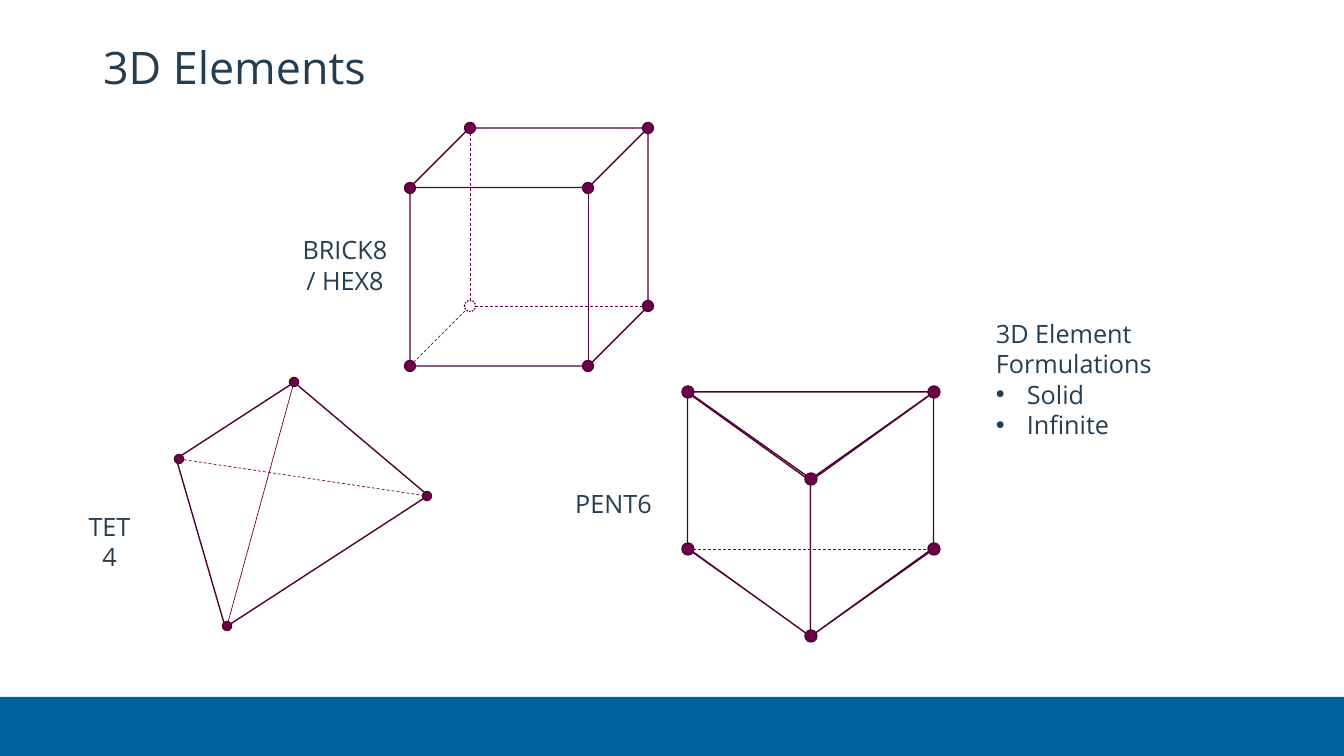
import dataclasses
import itertools
import typing

import lxml.etree
import pptx
import pptx.dml.color
import pptx.enum.dml
import pptx.enum.shapes
import pptx.enum.text
import pptx.oxml.ns
import pptx.util

KIND = pptx.enum.shapes.MSO_SHAPE
DASH = pptx.enum.dml.MSO_LINE
ALIGN = pptx.enum.text.PP_ALIGN
ANCHOR = pptx.enum.text.MSO_ANCHOR
FIT = pptx.enum.text.MSO_AUTO_SIZE

SCALE = 12192000 / 1344
INK, PLUM, EDGE, WHITE, BLUE = "243D51", "6D0049", "510036", "FFFFFF", "0061A0"
FONT = "Open Sans"
INDENT = 31

Point = tuple[int, int]
Box = tuple[int, int, int, int]


@dataclasses.dataclass
class Face:
    kind: KIND
    box: Box
    fill: str | None = WHITE
    turn: int = 0
    flip: bool = False
    adjust: float | None = None


@dataclasses.dataclass
class Edge:
    start: Point
    end: Point
    dashed: bool = True


@dataclasses.dataclass
class Solid:
    faces: list[Face]
    edges: list[Edge]
    nodes: list[Point]
    size: int
    hidden: Point | None = None


@dataclasses.dataclass
class Label:
    lines: list[str]
    box: Box
    bullets: list[str] = dataclasses.field(default_factory=list)
    align: ALIGN = ALIGN.CENTER
    anchor: ANCHOR = ANCHOR.MIDDLE


def px(count: float) -> int:
    return round(count * SCALE)


def rgb(code: str) -> pptx.dml.color.RGBColor:
    return pptx.dml.color.RGBColor.from_string(code)


def assign(target: typing.Any, values: dict[str, typing.Any]) -> None:
    for name, value in values.items():
        setattr(target, name, value)


def style(font: typing.Any, size: int) -> None:
    assign(font, {"name": FONT, "size": pptx.util.Pt(size), "bold": False})
    font.color.rgb = rgb(INK)


def draw_face(shapes: typing.Any, face: Face, line: str | None = EDGE) -> typing.Any:
    shape = shapes.add_shape(face.kind, *map(px, face.box))
    shape.shadow.inherit = False
    shape.rotation = face.turn
    if face.flip:
        shape._element.spPr.xfrm.set("flipV", "1")
    if face.adjust is not None:
        shape.adjustments[0] = face.adjust
    if face.fill:
        shape.fill.solid()
        shape.fill.fore_color.rgb = rgb(face.fill)
    else:
        shape.fill.background()
    if line:
        shape.line.color.rgb = rgb(line)
        shape.line.width = pptx.util.Pt(1)
    else:
        shape.line.fill.background()
    return shape


def draw_edge(shapes: typing.Any, edge: Edge) -> None:
    line = shapes.add_connector(
        pptx.enum.shapes.MSO_CONNECTOR.STRAIGHT, *map(px, edge.start + edge.end))
    line.line.color.rgb = rgb(PLUM)
    line.line.width = pptx.util.Pt(0.5)
    if edge.dashed:
        line.line.dash_style = DASH.DASH
    lxml.etree.SubElement(line._element.spPr, pptx.oxml.ns.qn("a:effectLst"))


def draw_node(shapes: typing.Any, node: Point, size: int, fill: str = PLUM) -> typing.Any:
    x, y = node
    return draw_face(shapes, Face(KIND.OVAL, (x - size / 2, y - size / 2, size, size), fill))


def draw_solid(slide: typing.Any, solid: Solid) -> None:
    shapes = slide.shapes.add_group_shape().shapes
    for face in solid.faces:
        draw_face(shapes, face)
    for edge in solid.edges:
        draw_edge(shapes, edge)
    for node in solid.nodes:
        draw_node(shapes, node, solid.size)
    if solid.hidden:
        draw_node(shapes, solid.hidden, solid.size, WHITE).line.dash_style = DASH.ROUND_DOT


def draw_label(slide: typing.Any, label: Label) -> None:
    frame = slide.shapes.add_textbox(*map(px, label.box)).text_frame
    assign(frame, {"word_wrap": True, "auto_size": FIT.SHAPE_TO_FIT_TEXT,
                   "vertical_anchor": label.anchor})
    texts = label.lines + label.bullets
    frame.text = "\n".join(texts)
    for index, para in enumerate(frame.paragraphs):
        para.alignment = label.align
        if index >= len(label.lines):
            props = para._p.get_or_add_pPr()
            props.set("marL", str(px(INDENT)))
            props.set("indent", str(-px(INDENT)))
            for tag, key, value in (("a:buFont", "typeface", "Arial"), ("a:buChar", "char", "•")):
                lxml.etree.SubElement(props, pptx.oxml.ns.qn(tag)).set(key, value)
        style(para.runs[0].font, 18)


def draw_title(slide: typing.Any, text: str) -> None:
    title = slide.shapes.title
    assign(title, dict(zip(("left", "top", "width", "height"), map(px, (93, 40, 1159, 59)))))
    frame = title.text_frame
    frame.text = text
    assign(frame, {"vertical_anchor": ANCHOR.MIDDLE, "word_wrap": True})
    assign(frame.paragraphs[0], {"alignment": ALIGN.LEFT, "line_spacing": 0.9})
    style(frame.paragraphs[0].runs[0].font, 32)


def make_tet() -> Solid:
    top, left, right, foot = (294, 382), (179, 459), (427, 496), (227, 626)
    base = Face(KIND.TRAPEZOID, (160, 407, 242, 168), turn=327, adjust=0.302)
    return Solid([base], [Edge(top, foot, False), Edge(left, right)],
                 [foot, left, top, right], 9)


def make_brick() -> Solid:
    left, top, side, depth = 410, 128, 238, 60
    front = list(itertools.product((left, left + side - depth), (top + depth, top + side)))
    back = [(x + depth, y - depth) for x, y in front]
    hidden = back.pop(1)
    edges = [Edge(end, hidden) for end in (front[1], back[0], back[-1])]
    cube = Face(KIND.CUBE, (left, top, side, side), None)
    return Solid([cube], edges, front + back, 11, hidden)


def make_prism() -> Solid:
    left, half, top, depth, drop = 688, 123, 392, 87, 157
    levels = (top, top + drop)
    faces = [Face(KIND.ISOSCELES_TRIANGLE, (left, y, 2 * half, depth), flip=True) for y in levels]
    faces += [Face(KIND.PARALLELOGRAM, (x, 453, drop + depth, half), turn=90, flip=flip, adjust=0.72)
              for x, flip in ((627, False), (627 + half, True))]
    nodes = [(left + step * half, y + (depth if step == 1 else 0))
             for y, step in itertools.product(levels, range(3))]
    return Solid(faces, [Edge(nodes[3], nodes[5])], nodes, 12)


LABELS = [
    Label(["TET4"], (73, 506, 73, 40), anchor=ANCHOR.TOP),
    Label(["BRICK8", "/ HEX8"], (289, 229, 112, 72)),
    Label(["PENT6"], (562, 483, 103, 40), anchor=ANCHOR.TOP),
    Label(["3D Element Formulations"], (986, 328, 302, 102), ["Solid", "Infinite"], ALIGN.LEFT),
]


def main() -> None:
    deck = pptx.Presentation()
    assign(deck, {"slide_width": px(1344), "slide_height": px(756)})
    slide = deck.slides.add_slide(deck.slide_layouts[5])
    draw_face(slide.shapes, Face(KIND.RECTANGLE, (0, 697, 1344, 59), BLUE), None)
    draw_title(slide, "3D Elements")
    for solid in (make_tet(), make_brick(), make_prism()):
        draw_solid(slide, solid)
    for label in LABELS:
        draw_label(slide, label)
    deck.save("out.pptx")


if __name__ == "__main__":
    main()
